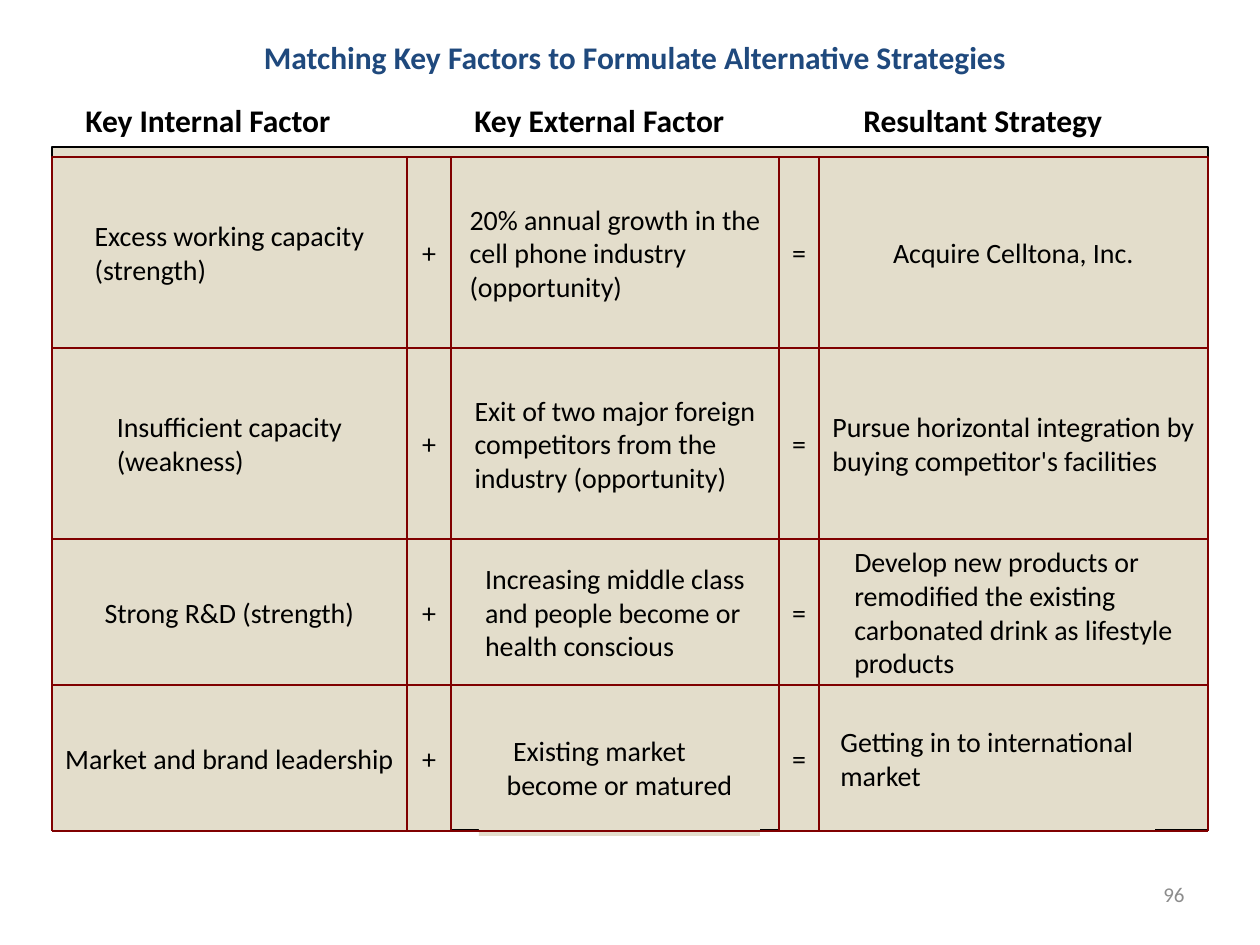
import pptx
import pptx.util
import pptx.dml.color
import pptx.enum.shapes
import pptx.enum.text
import lxml.etree

PX = 914400 / 126
BEIGE, MAROON, BLACK, NAVY, GREY = "E3DDCB", "800000", "000000", "1F497D", "8C8C8C"
ALIGN = pptx.enum.text.PP_ALIGN
ANCHOR = pptx.enum.text.MSO_ANCHOR

COLUMN_X = [0, 355, 399, 727, 767, 1156]
ROW_Y = [0, 191, 382, 528, 674]
ROWS = [
    ("Excess working capacity (strength)",
     "20% annual growth in the cell phone industry (opportunity)",
     "Acquire Celltona, Inc."),
    ("Insufficient capacity (weakness)",
     "Exit of two major foreign competitors from the industry (opportunity)",
     "Pursue horizontal integration by buying competitor's facilities"),
    ("Strong R&D (strength)",
     "Increasing middle class and people become or health conscious",
     "Develop new products or remodified the existing carbonated drink as lifestyle products"),
    ("Market and brand leadership",
     " Existing market become or matured",
     "Getting in to international market"),
]
LAST_ROW_BOXES = {2: (427, 542, 281, 137), 4: (767, 528, 336, 146)}


def emu(*lengths):
    return [round(n * PX) for n in lengths]


def color(hex_string):
    return pptx.dml.color.RGBColor.from_string(hex_string)


def write(sp, text, size, hex_string, bold=False, align=ALIGN.LEFT, anchor=ANCHOR.TOP):
    tf = sp.text_frame
    tf.text = text
    tf.word_wrap = True
    tf.auto_size = pptx.enum.text.MSO_AUTO_SIZE.NONE
    tf.vertical_anchor = anchor
    p = tf.paragraphs[0]
    p.alignment = align
    f = p.runs[0].font
    f.name = "Calibri"
    f.size = pptx.util.Pt(size)
    f.bold = bold
    f.color.rgb = color(hex_string)


def add_text(s, box, text, size, hex_string, **style):
    sp = s.shapes.add_textbox(*emu(*box))
    write(sp, text, size, hex_string, **style)


def add_rect(s, box, line=None):
    sp = s.shapes.add_shape(pptx.enum.shapes.MSO_SHAPE.RECTANGLE, *emu(*box))
    sp.shadow.inherit = False
    sp.fill.solid()
    sp.fill.fore_color.rgb = color(BEIGE)
    if line:
        sp.line.color.rgb = color(line)
        sp.line.width = pptx.util.Pt(0.75)
    else:
        sp.line.fill.background()
    return sp


def add_rule(s, x1, y1, x2, y2):
    c = s.shapes.add_connector(pptx.enum.shapes.MSO_CONNECTOR.STRAIGHT, *emu(x1, y1, x2, y2))
    c.line.color.rgb = color(MAROON)
    c.line.width = pptx.util.Pt(1)
    sp_pr = c._element.spPr
    lxml.etree.SubElement(sp_pr, pptx.oxml.ns.qn("a:effectLst"))


def add_title(s, x, y, w, h):
    sp = s.shapes.title
    sp.left, sp.top, sp.width, sp.height = emu(x, y, w, h)
    write(sp, "Matching Key Factors to Formulate Alternative Strategies", 18, NAVY,
          bold=True, align=ALIGN.CENTER)


def add_headings(s, x, y, w, h):
    headings = ["Key Internal Factor", "Key External Factor", "Resultant Strategy"]
    for i, heading in enumerate(headings):
        add_text(s, (x + 389 * i, y, w, h), heading, 18, BLACK, bold=True)


def add_cells(s, x, y):
    last = len(ROWS) - 1
    for row in reversed(range(len(ROWS))):
        internal, external, strategy = ROWS[row]
        texts = [internal, "+", external, "=", strategy]
        for col in reversed(range(len(texts))):
            left, top = COLUMN_X[col], ROW_Y[row]
            box = (left, top, COLUMN_X[col + 1] - left, ROW_Y[row + 1] - top)
            if row == last:
                box = LAST_ROW_BOXES.get(col, box)
            line = None if row == last and col % 2 == 0 else MAROON
            sp = add_rect(s, (x + box[0], y + box[1], box[2], box[3]), line)
            write(sp, texts[col], 16, BLACK, anchor=ANCHOR.MIDDLE)
            sp.text_frame._txBody.bodyPr.set("anchorCtr", "1")


def add_rules(s, x, y):
    for col in (0, 2, 4):
        for row, top in enumerate(ROW_Y):
            if (col, row) != (2, 3):
                add_rule(s, x + COLUMN_X[col], y + top, x + COLUMN_X[col + 1], y + top)
    for left in COLUMN_X:
        add_rule(s, x + left, y, x + left, y + ROW_Y[-1])


def add_matrix(s, x, y):
    add_rect(s, (x, y - 10, COLUMN_X[-1], 683), BLACK)
    add_cells(s, x, y)
    add_rules(s, x, y)


def main():
    prs = pptx.Presentation()
    prs.slide_width, prs.slide_height = emu(1260, 945)
    s = prs.slides.add_slide(prs.slide_layouts[5])
    add_text(s, (903, 861, 294, 66), "96", 12, GREY, align=ALIGN.RIGHT, anchor=ANCHOR.MIDDLE)
    add_matrix(s, 52, 157)
    add_headings(s, 73, 95, 325, 50)
    add_title(s, 189, 32, 892, 50)
    prs.save("out.pptx")


if __name__ == "__main__":
    main()
